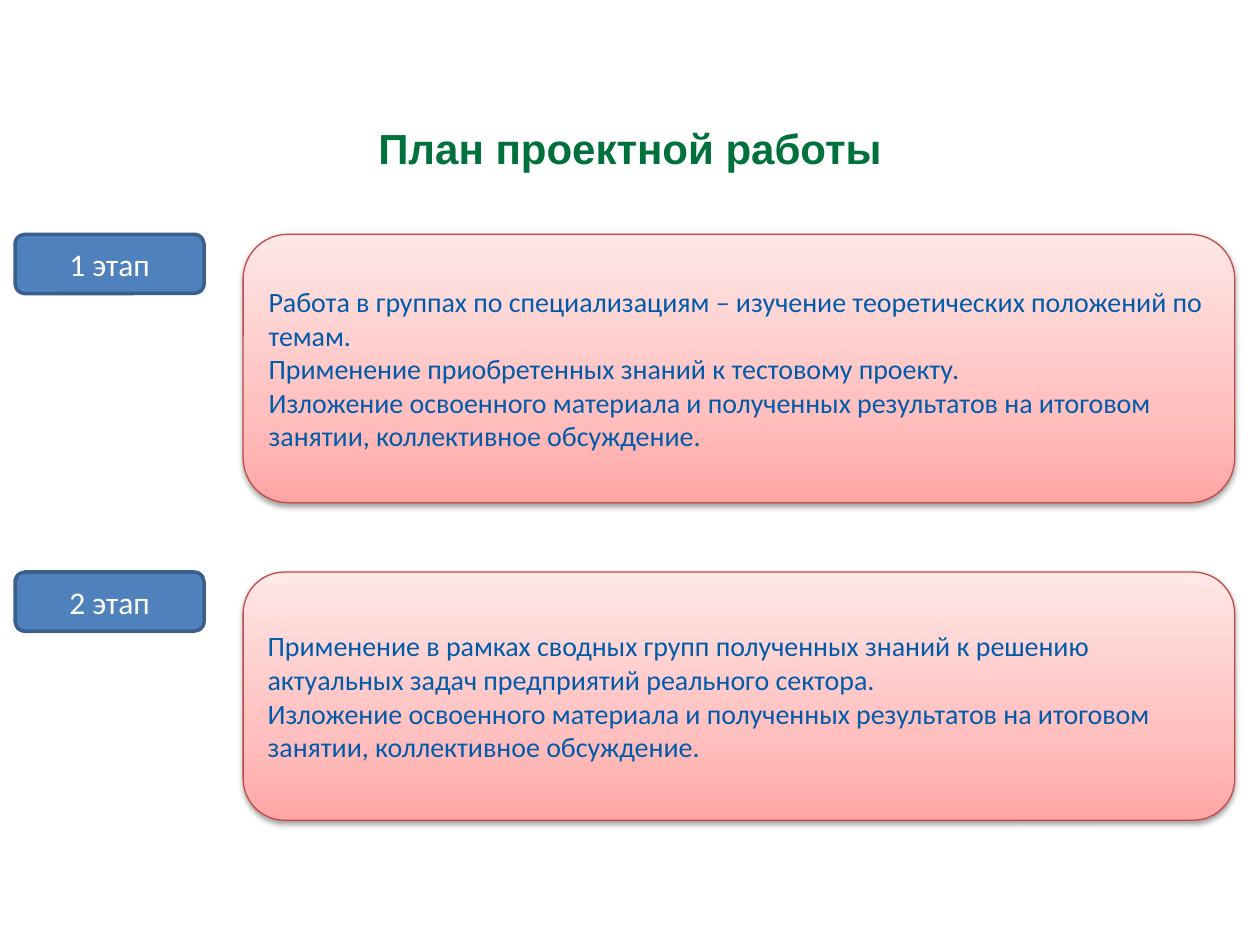
"""Builds a slide showing the two stages of a project work plan."""
from dataclasses import dataclass

from pptx import Presentation
from pptx.dml.color import RGBColor
from pptx.enum.shapes import MSO_SHAPE
from pptx.enum.text import MSO_ANCHOR, PP_ALIGN
from pptx.oxml import parse_xml
from pptx.oxml.ns import nsdecls, qn
from pptx.util import Inches, Pt

ROUNDED = MSO_SHAPE.ROUNDED_RECTANGLE
CENTER, LEFT = PP_ALIGN.CENTER, PP_ALIGN.LEFT
MIDDLE = MSO_ANCHOR.MIDDLE

TITLE = "План проектной работы"
STAGES = [
    {"label": "1 этап", "top": 1.86, "height": 2.13, "steps": [
        "Работа в группах по специализациям – изучение теоретических положений по темам.",
        "Применение приобретенных знаний к тестовому проекту.",
        "Изложение освоенного материала и полученных результатов на итоговом занятии, коллективное обсуждение.",
    ]},
    {"label": "2 этап", "top": 4.54, "height": 1.97, "steps": [
        "Применение в рамках сводных групп полученных знаний к решению актуальных задач предприятий реального сектора.",
        "Изложение освоенного материала и полученных результатов на итоговом занятии, коллективное обсуждение.",
    ]},
]


@dataclass(frozen=True)
class Theme:
    title_font: str = "Arial"
    body_font: str = "Calibri"
    title_size: int = 24
    label_size: int = 18
    step_size: int = 16
    title: str = "00703C"
    label: str = "FFFFFF"
    step: str = "005BAA"
    label_fill: str = "4F81BD"
    label_line: str = "3A5F8C"
    panel_line: str = "BF4C48"
    panel_stops: tuple = ((0, "FFA6A5"), (35, "FFC0BF"), (100, "FFE7E7"))


THEME = Theme()
SLIDE_WIDTH, SLIDE_HEIGHT = 10, 7.5
LABEL_LEFT, LABEL_WIDTH, LABEL_HEIGHT = 0.12, 1.5, 0.47
PANEL_LEFT, PANEL_WIDTH = 1.93, 7.87


def write(frame, lines, font, size, color, align, bold=False):
    frame.word_wrap = True
    for index, line in enumerate(lines):
        para = frame.paragraphs[0] if index == 0 else frame.add_paragraph()
        para.alignment = align
        span = para.add_run()
        span.text = line
        span.font.name, span.font.size, span.font.bold = font, Pt(size), bold
        span.font.color.rgb = RGBColor.from_string(color)


def add_box(page, left, top, width, height, line_color, line_width):
    box = page.shapes.add_shape(ROUNDED, *map(Inches, (left, top, width, height)))
    box.shadow.inherit = False
    box.line.color.rgb = RGBColor.from_string(line_color)
    box.line.width = Pt(line_width)
    box.text_frame.vertical_anchor = MIDDLE
    return box


def style_panel(panel):
    panel.fill.gradient()
    properties = panel.element.spPr
    stops = "".join(
        f'<a:gs pos="{share * 1000}"><a:srgbClr val="{color}"/></a:gs>'
        for share, color in THEME.panel_stops)
    gradient = parse_xml(
        f'<a:gradFill {nsdecls("a")} rotWithShape="1"><a:gsLst>{stops}</a:gsLst>'
        '<a:lin ang="16200000" scaled="0"/></a:gradFill>')
    properties.replace(properties.find(qn("a:gradFill")), gradient)
    properties.find(qn("a:effectLst")).append(parse_xml(
        f'<a:outerShdw {nsdecls("a")} blurRad="{Pt(3.1)}" dist="{Pt(1.6)}" dir="5400000" '
        'rotWithShape="0"><a:srgbClr val="000000"><a:alpha val="38000"/></a:srgbClr></a:outerShdw>'))


def add_stage(page, stage):
    label = add_box(page, LABEL_LEFT, stage["top"], LABEL_WIDTH, LABEL_HEIGHT, THEME.label_line, 2)
    label.fill.solid()
    label.fill.fore_color.rgb = RGBColor.from_string(THEME.label_fill)
    write(label.text_frame, [stage["label"]], THEME.body_font, THEME.label_size, THEME.label, CENTER)

    panel = add_box(page, PANEL_LEFT, stage["top"], PANEL_WIDTH, stage["height"], THEME.panel_line, 0.75)
    style_panel(panel)
    write(panel.text_frame, stage["steps"], THEME.body_font, THEME.step_size, THEME.step, LEFT)


def main():
    deck = Presentation()
    deck.slide_width, deck.slide_height = Inches(SLIDE_WIDTH), Inches(SLIDE_HEIGHT)
    page = deck.slides.add_slide(deck.slide_layouts[5])
    title = page.shapes.title
    title.left, title.top = 0, Inches(0.92)
    title.width, title.height = Inches(SLIDE_WIDTH), Inches(0.5)
    title.text_frame.vertical_anchor = MIDDLE
    write(title.text_frame, [TITLE], THEME.title_font, THEME.title_size, THEME.title, CENTER, True)
    for stage in STAGES:
        add_stage(page, stage)
    deck.save("out.pptx")


if __name__ == "__main__":
    main()
